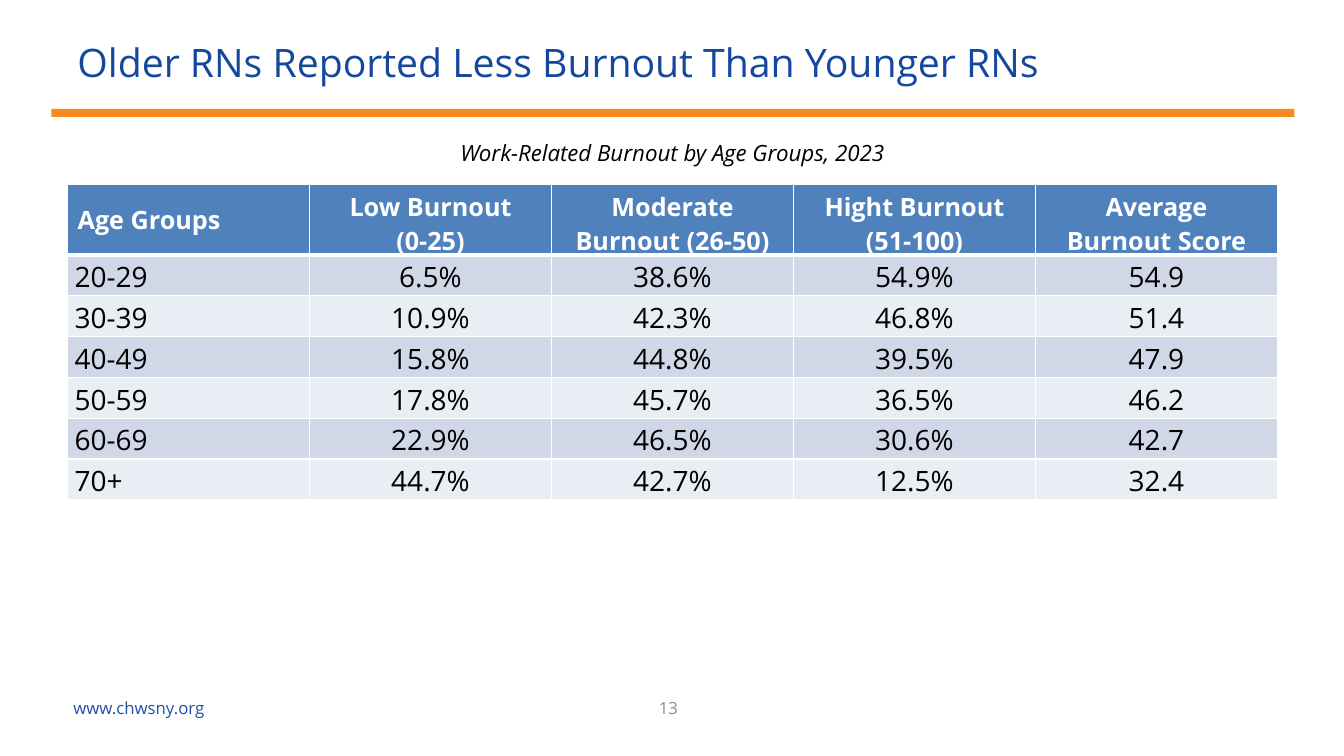
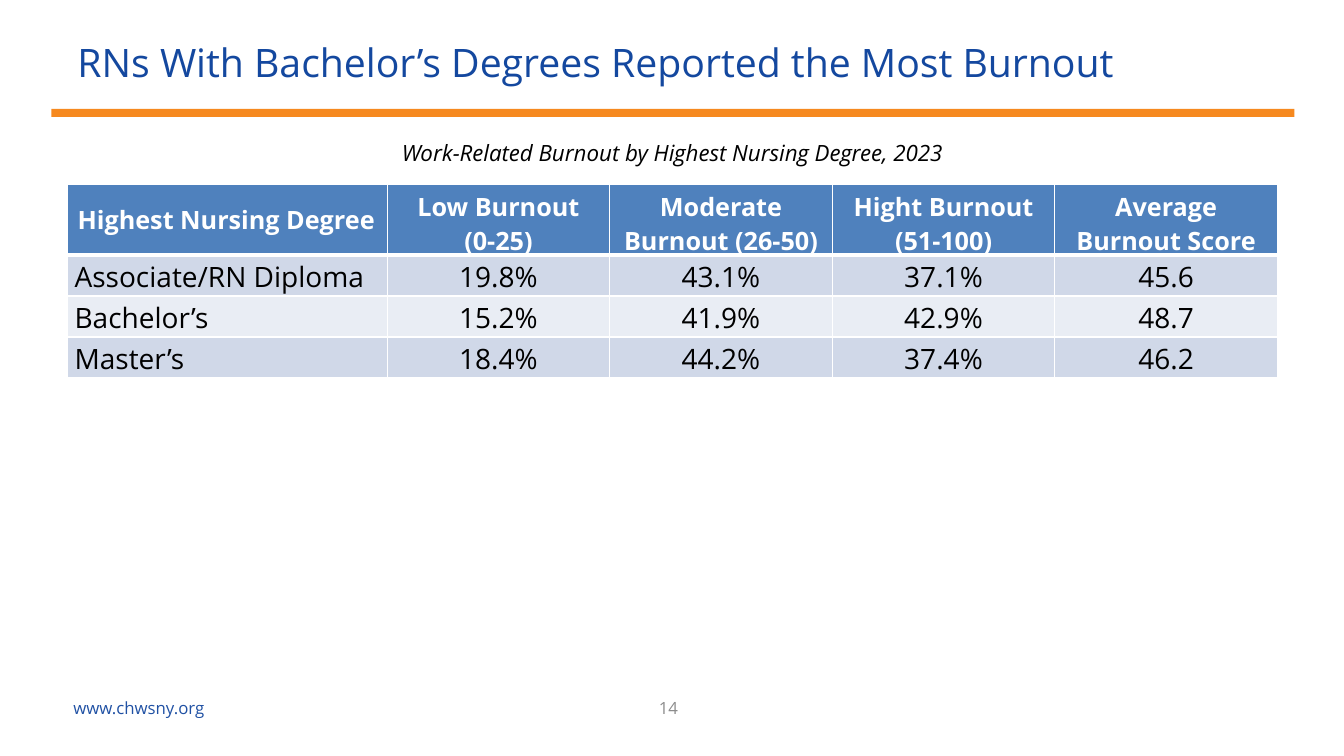
import dataclasses

import lxml.etree
import pptx
import pptx.dml.color
import pptx.enum.shapes
import pptx.enum.text
import pptx.oxml.ns
import pptx.util

Inches = pptx.util.Inches
Pt = pptx.util.Pt
CENTER = pptx.enum.text.PP_ALIGN.CENTER
LEFT = pptx.enum.text.PP_ALIGN.LEFT
MIDDLE = pptx.enum.text.MSO_ANCHOR.MIDDLE


def style(size, color, bold=False, italic=False):
    return {"name": "Open Sans", "size": Pt(size), "bold": bold,
            "italic": italic, "color": color}


@dataclasses.dataclass(frozen=True)
class Theme:
    band = "F6891F"
    header_fill = "4F81BD"
    row_fills = ("D0D8E8", "E9EDF4")
    border = "FFFFFF"
    thin = 1
    thick = 3
    title = style(28, "14489F")
    caption = style(16, "000000", italic=True)
    header = style(18, "FFFFFF", bold=True)
    body = style(20, "000000")
    page_number = style(12, "8C8C8C")
    website = style(12, "2051A4")


@dataclasses.dataclass(frozen=True)
class Box:
    left: float
    top: float
    width: float
    height: float

    def lengths(self):
        return [Inches(value) for value in dataclasses.astuple(self)]


THEME = Theme()
WEBSITE = "www.chwsny.org"
SCORE_HEADERS = ["Low Burnout\n(0-25)", "Moderate Burnout (26-50)",
                 "Hight Burnout (51-100)", "Average\nBurnout Score"]
HEADER_HEIGHT = 0.7

TABLE_SLIDES = [
    {
        "title": "Older RNs Reported Less Burnout Than Younger RNs",
        "caption": "Work-Related Burnout by Age Groups, 2023",
        "number": 13,
        "table_height": 3.13,
        "label_width": 2.4,
        "rows": [
            ["Age Groups", *SCORE_HEADERS],
            ["20-29", "6.5%", "38.6%", "54.9%", "54.9"],
            ["30-39", "10.9%", "42.3%", "46.8%", "51.4"],
            ["40-49", "15.8%", "44.8%", "39.5%", "47.9"],
            ["50-59", "17.8%", "45.7%", "36.5%", "46.2"],
            ["60-69", "22.9%", "46.5%", "30.6%", "42.7"],
            ["70+", "44.7%", "42.7%", "12.5%", "32.4"],
        ],
    },
    {
        "title": "RNs With Bachelor’s Degrees Reported the Most Burnout",
        "caption": "Work-Related Burnout by Highest Nursing Degree, 2023",
        "number": 14,
        "table_height": 1.92,
        "label_width": 3.17,
        "rows": [
            ["Highest Nursing Degree", *SCORE_HEADERS],
            ["Associate/RN Diploma", "19.8%", "43.1%", "37.1%", "45.6"],
            ["Bachelor’s", "15.2%", "41.9%", "42.9%", "48.7"],
            ["Master’s", "18.4%", "44.2%", "37.4%", "46.2"],
        ],
    },
]


def set_attributes(target, values):
    for name, value in values.items():
        setattr(target, name, value)


def rgb(color):
    return pptx.dml.color.RGBColor.from_string(color)


def fill_solid(target, color):
    target.fill.solid()
    target.fill.fore_color.rgb = rgb(color)


def write_text(text_frame, text, text_style, **paragraph_format):
    """Write text with one paragraph per line."""
    text_frame.text = text
    for paragraph in text_frame.paragraphs:
        set_attributes(paragraph, paragraph_format)
        for run in paragraph.runs:
            set_attributes(run.font, {name: value for name, value in text_style.items()
                                      if name != "color"})
            run.font.color.rgb = rgb(text_style["color"])


def add_text(slide, box, text, text_style, anchor=MIDDLE, **paragraph_format):
    shape = slide.shapes.add_textbox(*box.lengths())
    set_attributes(shape.text_frame, {"word_wrap": True, "vertical_anchor": anchor})
    write_text(shape.text_frame, text, text_style, **paragraph_format)


def add_band(slide, box):
    shape = slide.shapes.add_shape(
        pptx.enum.shapes.MSO_SHAPE.RECTANGLE, *box.lengths())
    shape.shadow.inherit = False
    fill_solid(shape, THEME.band)
    shape.line.fill.background()


def set_borders(cell, top, bottom):
    """Draw the four cell borders; top and bottom are widths in points."""
    properties = cell._tc.get_or_add_tcPr()
    widths = {"lnL": THEME.thin, "lnR": THEME.thin, "lnT": top, "lnB": bottom}
    for position, (tag, width) in enumerate(widths.items()):
        line = lxml.etree.Element(pptx.oxml.ns.qn(f"a:{tag}"), w=str(Pt(width)))
        fill = lxml.etree.SubElement(line, pptx.oxml.ns.qn("a:solidFill"))
        lxml.etree.SubElement(fill, pptx.oxml.ns.qn("a:srgbClr"), val=THEME.border)
        properties.insert(position, line)


def format_cell(cell, text, row_index, column_index):
    alignment = CENTER if column_index else LEFT
    cell.vertical_anchor = MIDDLE
    if row_index == 0:
        fill_solid(cell, THEME.header_fill)
        write_text(cell.text_frame, text, THEME.header, alignment=alignment)
    else:
        fill_solid(cell, THEME.row_fills[(row_index - 1) % 2])
        set_attributes(cell, {"margin_left": Inches(0.07), "margin_right": Inches(0.07),
                              "margin_top": 0, "margin_bottom": 0})
        write_text(cell.text_frame, text, THEME.body, alignment=alignment,
                   line_spacing=1.07)
    set_borders(cell,
                top=THEME.thick if row_index == 1 else THEME.thin,
                bottom=THEME.thick if row_index == 0 else THEME.thin)


def add_burnout_table(slide, box, rows, label_width):
    frame = slide.shapes.add_table(len(rows), len(rows[0]), *box.lengths())
    table = frame.table
    table.horz_banding = False
    score_width = (box.width - label_width) / (len(rows[0]) - 1)
    for index, column in enumerate(table.columns):
        column.width = Inches(score_width if index else label_width)
    row_height = (box.height - HEADER_HEIGHT) / (len(rows) - 1)
    for row_index, (row, texts) in enumerate(zip(table.rows, rows)):
        row.height = Inches(row_height)
        for column_index, (cell, text) in enumerate(zip(row.cells, texts)):
            format_cell(cell, text, row_index, column_index)
    # The header row takes up the height that the equal rows leave free.
    frame.height = Inches(box.height)


def add_footer(slide, box, number):
    add_text(slide, Box(box.left + 4.5, box.top, 3, box.height), str(number),
             THEME.page_number, alignment=CENTER)
    add_text(slide, Box(box.left, box.top, 4.37, box.height), WEBSITE, THEME.website)


def add_table_slide(presentation, content):
    slide = presentation.slides.add_slide(presentation.slide_layouts[6])
    add_band(slide, Box(0.51, 1.08, 12.33, 0.08))
    add_text(slide, Box(0.67, 0.13, 12, 0.96), content["title"], THEME.title)
    add_text(slide, Box(0.67, 1.31, 12, 0.38), content["caption"], THEME.caption,
             anchor=pptx.enum.text.MSO_ANCHOR.TOP, alignment=CENTER,
             line_spacing=1.07, space_after=Pt(8))
    add_burnout_table(slide, Box(0.67, 1.83, 12, content["table_height"]),
                      content["rows"], content["label_width"])
    add_footer(slide, Box(0.63, 6.82, 12, 0.4), content["number"])


def main():
    presentation = pptx.Presentation()
    set_attributes(presentation, {"slide_width": Inches(13.33),
                                  "slide_height": Inches(7.5)})
    for content in TABLE_SLIDES:
        add_table_slide(presentation, content)
    presentation.save("out.pptx")


if __name__ == "__main__":
    main()
